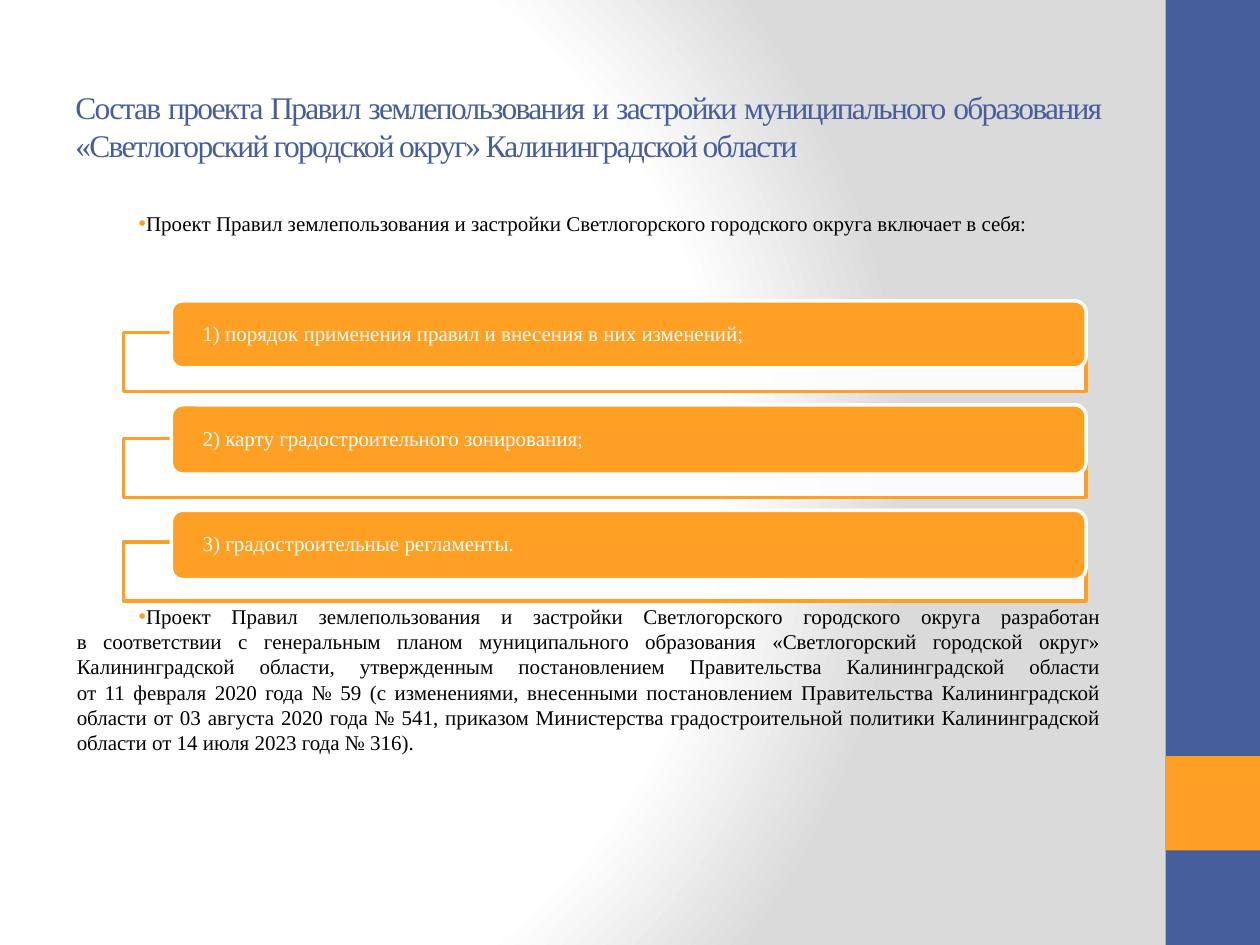
"""Build a slide on the contents of the draft land use and development rules."""
from dataclasses import dataclass

from lxml import etree
from pptx import Presentation
from pptx import util as u
from pptx.dml import color
from pptx.enum import shapes, text
from pptx.oxml import ns

COLOURS = {
    "blue": "465E9C",
    "orange": "FDA023",
    "white": "FFFFFF",
    "grey": "DADADA",
    "black": "000000",
}
BODY_FONT = {"name": "Times New Roman", "size": u.Pt(12)}
TITLE_FONT = {"name": "Times New Roman", "size": u.Pt(18)}
BAR_FRAME = {
    "word_wrap": True,
    "vertical_anchor": text.MSO_ANCHOR.MIDDLE,
    "margin_left": u.Pt(16),
    "margin_right": u.Pt(16),
    "margin_top": 0,
    "margin_bottom": 0,
}
TITLE = (
    "Состав проекта Правил землепользования и застройки муниципального образования "
    "«Светлогорский городской округ» Калининградской области"
)
INTRO = (
    "Проект Правил землепользования и застройки Светлогорского городского округа "
    "включает в себя:"
)
BASIS = (
    "Проект Правил землепользования и застройки Светлогорского городского округа разработан\v"
    "в соответствии с генеральным планом муниципального образования «Светлогорский "
    "городской округ» Калининградской области, утвержденным постановлением "
    "Правительства Калининградской области\v"
    "от 11 февраля 2020 года № 59 (с изменениями, внесенными постановлением "
    "Правительства Калининградской области от 03 августа 2020 года № 541, приказом "
    "Министерства градостроительной политики Калининградской области "
    "от 14 июля 2023 года № 316)."
)


@dataclass
class Box:
    left: float
    top: float
    width: float
    height: float

    def lengths(self) -> list:
        return [u.Pt(v) for v in (self.left, self.top, self.width, self.height)]


@dataclass
class Part:
    wording: str
    bar_top: float
    bar_height: float
    frame_top: float


PARTS = [
    Part("1) порядок применения правил и внесения в них изменений;", 172, 38.2, 190.1),
    Part("2) карту градостроительного зонирования;", 231.3, 39.6, 250.6),
    Part("3) градостроительные регламенты.", 291.6, 39.6, 309.6),
]


def rgb(name: str) -> color.RGBColor:
    return color.RGBColor.from_string(COLOURS[name])


def apply(target, values: dict) -> None:
    for key, value in values.items():
        setattr(target, key, value)


def add_element(parent, tag: str, **attributes: str):
    element = etree.SubElement(parent, ns.qn(tag))
    for key, value in attributes.items():
        element.set(key, value)
    return element


def paint_background(slide) -> None:
    fill = slide.background.fill
    fill.gradient()
    gradient = slide.background._cSld.find(".//" + ns.qn("a:gradFill"))
    for child in list(gradient):
        gradient.remove(child)
    stops = add_element(gradient, "a:gsLst")
    for position, name in ((0, "white"), (75000, "white"), (100000, "grey")):
        stop = add_element(stops, "a:gs", pos=str(position))
        add_element(stop, "a:srgbClr", val=COLOURS[name])
    circle = add_element(gradient, "a:path", path="circle")
    add_element(circle, "a:fillToRect", l="20000", t="50000", r="100000", b="50000")


def add_block(slide, kind, box: Box, fill: str, line: str = ""):
    block = slide.shapes.add_shape(kind, *box.lengths())
    block.shadow.inherit = False
    block.fill.solid()
    block.fill.fore_color.rgb = rgb(fill)
    if line:
        block.line.color.rgb = rgb(line)
        block.line.width = u.Pt(2)
    else:
        block.line.fill.background()
    return block


def write(paragraph, wording: str, font: dict, colour: str) -> None:
    paragraph.text = wording
    for run in paragraph.runs:
        apply(run.font, font)
        run.font.color.rgb = rgb(colour)


def add_title(slide) -> None:
    frame = slide.shapes.add_textbox(*Box(36, 21.6, 600, 100.8).lengths()).text_frame
    apply(frame, {"word_wrap": True, "vertical_anchor": text.MSO_ANCHOR.MIDDLE})
    heading = frame.paragraphs[0]
    heading.alignment = text.PP_ALIGN.JUSTIFY
    write(heading, TITLE, TITLE_FONT, "blue")
    for run in heading.runs:
        run.font._element.set("spc", "-100")


def add_bulleted(slide, box: Box, wording: str) -> None:
    frame = slide.shapes.add_textbox(*box.lengths()).text_frame
    frame.word_wrap = True
    paragraph = frame.paragraphs[0]
    properties = paragraph._p.get_or_add_pPr()
    apply(paragraph, {"alignment": text.PP_ALIGN.JUSTIFY})
    properties.set("marL", "0")
    properties.set("indent", str(u.Pt(35.4)))
    bullet_colour = add_element(properties, "a:buClr")
    add_element(bullet_colour, "a:srgbClr", val=COLOURS["orange"])
    add_element(properties, "a:buFont", typeface="Arial")
    add_element(properties, "a:buChar", char="•")
    write(paragraph, wording, BODY_FONT, "black")


def add_part(slide, part: Part) -> None:
    outline = add_block(slide, shapes.MSO_SHAPE.RECTANGLE,
                        Box(70.6, part.frame_top, 550, 33.8), "white", "orange")
    tint = outline._element.spPr.find(ns.qn("a:solidFill"))[0]
    add_element(tint, "a:alpha", val="90000")
    bar = add_block(slide, shapes.MSO_SHAPE.ROUNDED_RECTANGLE,
                    Box(97.9, part.bar_top, 522.7, part.bar_height), "orange", "white")
    apply(bar.text_frame, BAR_FRAME)
    label = bar.text_frame.paragraphs[0]
    apply(label, {"alignment": text.PP_ALIGN.LEFT, "line_spacing": 0.9})
    write(label, part.wording, BODY_FONT, "white")


def main() -> None:
    deck = Presentation()
    apply(deck, {"slide_width": u.Pt(720), "slide_height": u.Pt(540)})
    slide = deck.slides.add_slide(deck.slide_layouts[6])
    paint_background(slide)
    add_block(slide, shapes.MSO_SHAPE.RECTANGLE, Box(666, 0, 54, 540), "blue")
    add_block(slide, shapes.MSO_SHAPE.RECTANGLE, Box(666, 432, 54, 54), "orange")
    add_bulleted(slide, Box(36.8, 116.6, 599.6, 24), INTRO)
    add_bulleted(slide, Box(36.8, 341.4, 599.6, 94), BASIS)
    add_title(slide)
    for part in PARTS:
        add_part(slide, part)
    deck.save("out.pptx")


if __name__ == "__main__":
    main()
